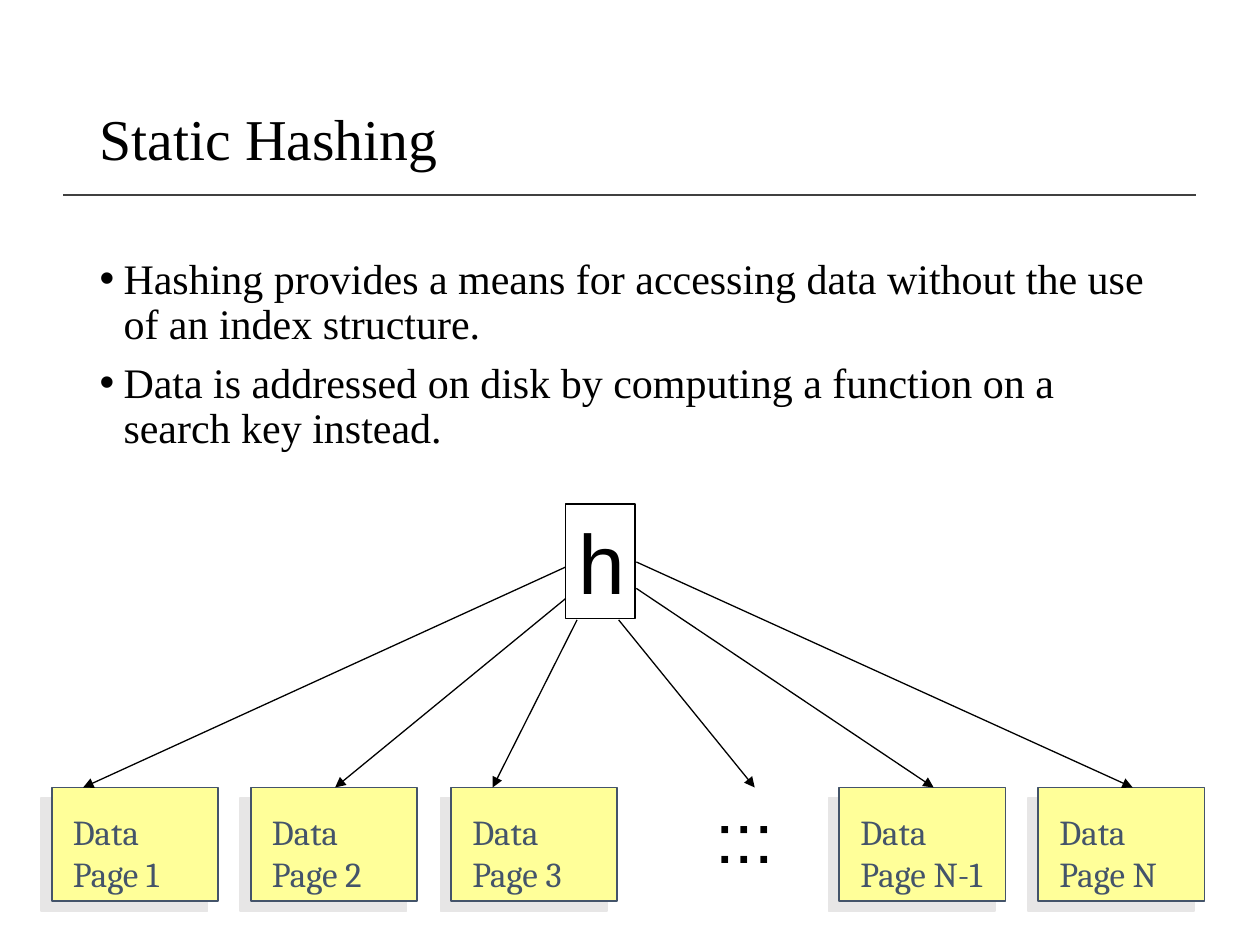
from lxml import etree
from pptx import Presentation
from pptx.dml.color import RGBColor
from pptx.enum.shapes import MSO_CONNECTOR, MSO_SHAPE
from pptx.enum.text import MSO_ANCHOR, MSO_AUTO_SIZE, PP_ALIGN
from pptx.oxml import parse_xml
from pptx.oxml.ns import nsdecls, qn
from pptx.util import Inches, Pt

COLORS = {"text": "000000", "rule": "404040", "page": "FFFF99",
          "page_text": "44546A", "shadow": "E7E6E6"}

TITLE = "Static Hashing"
BULLETS = [
    "Hashing provides a means for accessing data without the use of an index structure.",
    "Data is addressed on disk by computing a function on a search key instead.",
]
# label, left edge of the page, width of its label
PAGES = [
    ("Page 1", 0.41, 1.06),
    ("Page 2", 1.99, 1.06),
    ("Page 3", 3.58, 1.06),
    ("Page N-1", 6.66, 1.4),
    ("Page N", 8.24, 1.25),
]
PAGE_TOP, PAGE_W, PAGE_H = 6.25, 1.32, 0.9
# start x, start y, x of the tip on the row of pages
ARROWS = [
    (4.49, 4.5, 0.66),
    (4.49, 4.75, 2.66),
    (4.58, 4.92, 3.91),
    (4.91, 4.92, 5.99),
    (5.05, 4.67, 7.41),
    (5.05, 4.46, 8.99),
]


def rgb(name):
    return RGBColor.from_string(COLORS[name])


def place(sp, left, top, width, height):
    sp.left, sp.top, sp.width, sp.height = map(Inches, (left, top, width, height))


def write(tf, lines, size, font, color="text", wrap=True, bullet=False,
          spacing=None, gap=0):
    tf.word_wrap = wrap
    tf.auto_size = MSO_AUTO_SIZE.NONE
    for i, line in enumerate(lines):
        p = tf.paragraphs[0] if i == 0 else tf.add_paragraph()
        if bullet:
            pPr = p._p.get_or_add_pPr()
            pPr.set("marL", str(Inches(0.19)))
            pPr.set("indent", str(-Inches(0.19)))
            etree.SubElement(pPr, qn("a:buFont")).set("typeface", "Arial")
            etree.SubElement(pPr, qn("a:buChar")).set("char", "•")
        p.alignment = PP_ALIGN.LEFT
        p.line_spacing = spacing
        p.space_before = Pt(gap if i else 0)
        r = p.add_run()
        r.text = line
        r.font.size, r.font.name = Pt(size), font
        r.font.color.rgb = rgb(color)


def add_line(slide, x1, y1, x2, y2, color="text", width=0.75, arrow=False):
    line = slide.shapes.add_connector(
        MSO_CONNECTOR.STRAIGHT, *map(Inches, (x1, y1, x2, y2)))
    line.line.color.rgb = rgb(color)
    line.line.width = Pt(width)
    if arrow:
        etree.SubElement(line.line._get_or_add_ln(), qn("a:tailEnd")).set("type", "triangle")
    etree.SubElement(line._element.spPr, qn("a:effectLst"))


def add_text(slide, box, lines, size, font, **fmt):
    sp = slide.shapes.add_textbox(*map(Inches, box))
    write(sp.text_frame, lines, size, font, **fmt)
    return sp


def add_page(slide, left):
    """Draw a data page with a hard shadow to its lower left."""
    sp = slide.shapes.add_shape(
        MSO_SHAPE.RECTANGLE, *map(Inches, (left, PAGE_TOP, PAGE_W, PAGE_H)))
    sp.fill.solid()
    sp.fill.fore_color.rgb = rgb("page")
    sp.line.color.rgb = rgb("page_text")
    sp.line.width = Pt(1)
    sp.shadow.inherit = False
    sp._element.spPr.find(qn("a:effectLst")).append(parse_xml(
        f'<a:outerShdw {nsdecls("a")} dist="{Pt(8.5)}" dir="8100000" algn="ctr" '
        f'rotWithShape="0"><a:srgbClr val="{COLORS["shadow"]}"/></a:outerShdw>'))


def main():
    prs = Presentation()
    prs.slide_width, prs.slide_height = Inches(10), Inches(7.5)
    slide = prs.slides.add_slide(prs.slide_layouts[1])
    add_line(slide, 0.5, 1.55, 9.49, 1.55, color="rule", width=1)

    title, body = slide.placeholders
    place(title, 0.69, 0.4, 8.62, 1.45)
    title.text_frame.vertical_anchor = MSO_ANCHOR.MIDDLE
    write(title.text_frame, [TITLE], 33, "Times New Roman", spacing=0.9)
    place(body, 0.69, 2, 8.62, 4.76)
    write(body.text_frame, BULLETS, 24, "Times New Roman",
          bullet=True, spacing=0.9, gap=7.5)

    for label, left, width in PAGES:
        add_page(slide, left)
        add_text(slide, (left + 0.07, PAGE_TOP + 0.13, width, 0.76),
                 ["Data", label], 20, "Cambria", color="page_text")

    for x, y, tip in ARROWS:
        add_line(slide, x, y, tip, PAGE_TOP, arrow=True)

    h = add_text(slide, (4.49, 4, 0.55, 0.91), ["h"], 48, "Arial", wrap=False)
    h.line.color.rgb = rgb("text")
    h.line.width = Pt(0.75)
    add_text(slide, (5.58, PAGE_TOP, 0.66, 0.77), [":::"], 40, "Arial", wrap=False)

    prs.save("out.pptx")


if __name__ == "__main__":
    main()
